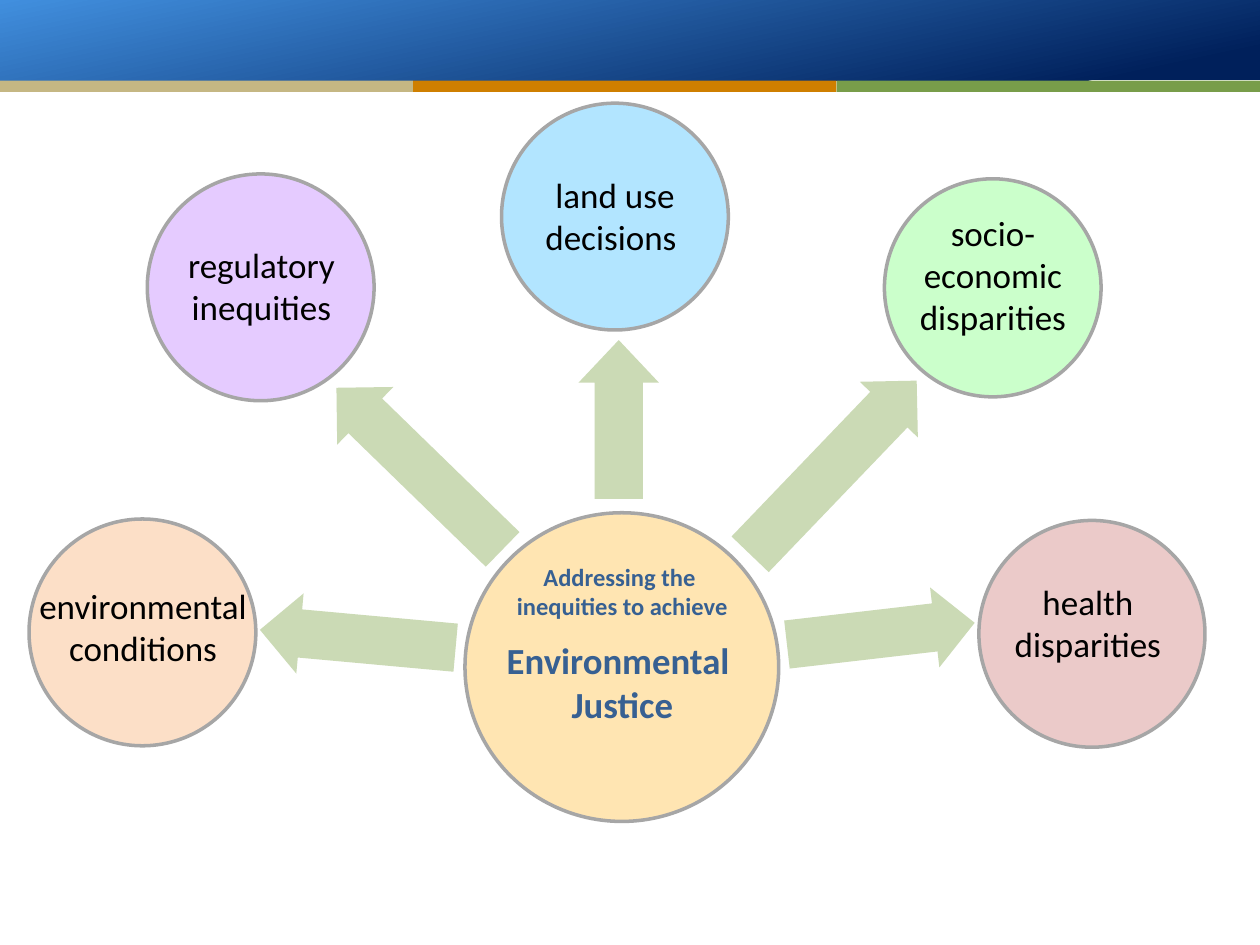
from dataclasses import dataclass
from typing import NamedTuple

from lxml.etree import SubElement
from pptx import Presentation
from pptx.dml.color import RGBColor
from pptx.enum.shapes import MSO_SHAPE
from pptx.enum.text import MSO_AUTO_SIZE, PP_ALIGN
from pptx.oxml.ns import qn
from pptx.util import Pt


@dataclass(frozen=True)
class Theme:
    font: str = "Calibri"
    header_dark: str = "00205B"
    header_light: str = "418FDE"
    stripes: tuple = ("C5B783", "CF7F00", "789D4A")
    outline: str = "A6A6A6"
    arrow: str = "CBDAB5"
    hub: str = "FFCC66"
    hub_text: str = "376092"
    factor_text: str = "000000"
    factor_size: float = 20
    lead_size: float = 14
    goal_size: float = 21


class Box(NamedTuple):
    left: float
    top: float
    width: float
    height: float

    def points(self):
        return [Pt(length) for length in self]

    def inner(self, dx, dy, width, height):
        return Box(self.left + dx, self.top + dy, width, height)


THEME = Theme()
ARROW_HEIGHT = 46

# Circle box, fill, label box relative to the circle, label paragraphs
FACTORS = [
    (Box(286.6, 59, 129.6, 129.6), "66CCFF", (2.2, 36.7, 125.3, 55.4),
     ["land use decisions "]),
    (Box(84.2, 99.4, 129.6, 129.6), "CC99FF", (2.9, 36, 124.6, 55.4),
     ["regulatory inequities"]),
    (Box(559.4, 297.4, 129.2, 129.6), "D99694", (0, 30.9, 124.6, 55.4),
     ["health disparities"]),
    (Box(505.4, 102.2, 123.8, 124.6), "99FF99", (-2.8, 15.2, 129.6, 79.9),
     ["socio-", "economic disparities"]),
    (Box(16.6, 296.6, 129.6, 129.6), "FAC090", (-6.5, 33.9, 143.3, 55.4),
     ["environmental conditions"]),
]

# Left, top, length, rotation, shaft share, head share
ARROWS = [
    (148.3, 342, 112.3, 5.2, 0.6, 0.5),
    (173.5, 244.8, 132.5, 44.2, 0.6, 0.5),
    (308.2, 216.7, 90.7, 90, 0.6, 0.53),
    (407.5, 244.1, 137.5, 133.8, 0.64, 0.5),
    (449.3, 339.1, 108, 173.4, 0.6, 0.5),
]


def add_plain_shape(slide, kind, box, color=None):
    shape = slide.shapes.add_shape(kind, *box.points())
    shape.shadow.inherit = False
    shape.line.fill.background()
    if color:
        shape.fill.solid()
        shape.fill.fore_color.rgb = RGBColor.from_string(color)
    return shape


def add_label(slide, box, lines, wrap=True, **margins):
    """Each line is (text, font format, space before)."""
    label = slide.shapes.add_textbox(*box.points())
    frame = label.text_frame
    frame_format = {"word_wrap": wrap,
                    "auto_size": MSO_AUTO_SIZE.SHAPE_TO_FIT_TEXT, **margins}
    for name, value in frame_format.items():
        setattr(frame, name, value)
    for index, (text, font_format, space) in enumerate(lines):
        paragraph = frame.add_paragraph() if index else frame.paragraphs[0]
        paragraph.alignment = PP_ALIGN.CENTER
        if space:
            paragraph.space_before = Pt(space)
        run = paragraph.add_run()
        run.text = text
        for name, value in font_format.items():
            setattr(run.font, name, value)
        # "color" is read-only on the font, so its rgb is set by the caller
    return frame


def color_label(frame, color):
    for paragraph in frame.paragraphs:
        for run in paragraph.runs:
            run.font.color.rgb = RGBColor.from_string(color)


def add_circle(slide, box, color):
    circle = add_plain_shape(slide, MSO_SHAPE.OVAL, box, color)
    circle.line.color.rgb = RGBColor.from_string(THEME.outline)
    circle.line.width = Pt(2)
    # Half-transparent fill
    fill_color = circle.fill._xPr.find(qn("a:solidFill")).find(qn("a:srgbClr"))
    SubElement(fill_color, qn("a:alpha"), val="50000")


def add_header(slide, box, stripe_height):
    # Gradient band
    band_height = box.height - stripe_height
    band = add_plain_shape(slide, MSO_SHAPE.RECTANGLE,
                           box.inner(0, 0, box.width, band_height))
    band.fill.gradient()
    band.fill.gradient_angle = 102
    stops = ((0.09, THEME.header_dark), (1, THEME.header_light))
    for stop, (position, color) in zip(band.fill.gradient_stops, stops):
        stop.position = position
        stop.color.rgb = RGBColor.from_string(color)
    # Three stripes below it
    edges = (0, 236, 478, box.width)
    for start, end, color in zip(edges, edges[1:], THEME.stripes):
        add_plain_shape(slide, MSO_SHAPE.RECTANGLE,
                        box.inner(start, band_height, end - start, stripe_height),
                        color)


def add_hub(slide, box):
    add_circle(slide, box, THEME.hub)
    lead = {"name": THEME.font, "size": Pt(THEME.lead_size), "bold": True}
    goal = {**lead, "size": Pt(THEME.goal_size)}
    lines = [("Addressing the ", lead, 0), ("inequities to achieve", lead, 0),
             ("Environmental ", goal, 9.8), ("Justice", goal, 0)]
    frame = add_label(slide, box.inner(12.9, 28.1, 154.1, 128.2), lines,
                      wrap=False, margin_top=0, margin_bottom=0)
    color_label(frame, THEME.hub_text)


def add_factor(slide, box, color, label_place, texts):
    add_circle(slide, box, color)
    font_format = {"name": THEME.font, "size": Pt(THEME.factor_size)}
    frame = add_label(slide, box.inner(*label_place),
                      [(text, font_format, 0) for text in texts])
    color_label(frame, THEME.factor_text)


def add_arrow(slide, box, rotation, shaft, head):
    arrow = add_plain_shape(slide, MSO_SHAPE.LEFT_ARROW, box, THEME.arrow)
    arrow.rotation = rotation
    arrow.adjustments[0] = shaft
    arrow.adjustments[1] = head


def main():
    deck = Presentation()
    deck.slide_width, deck.slide_height = Pt(720), Pt(540)
    slide = deck.slides.add_slide(deck.slide_layouts[6])
    add_header(slide, Box(0, 0, 720, 52.5), stripe_height=6.5)
    add_hub(slide, Box(265.7, 293, 179.3, 176.4))
    for factor in FACTORS:
        add_factor(slide, *factor)
    for left, top, length, *form in ARROWS:
        add_arrow(slide, Box(left, top, length, ARROW_HEIGHT), *form)
    deck.save("out.pptx")


if __name__ == "__main__":
    main()
